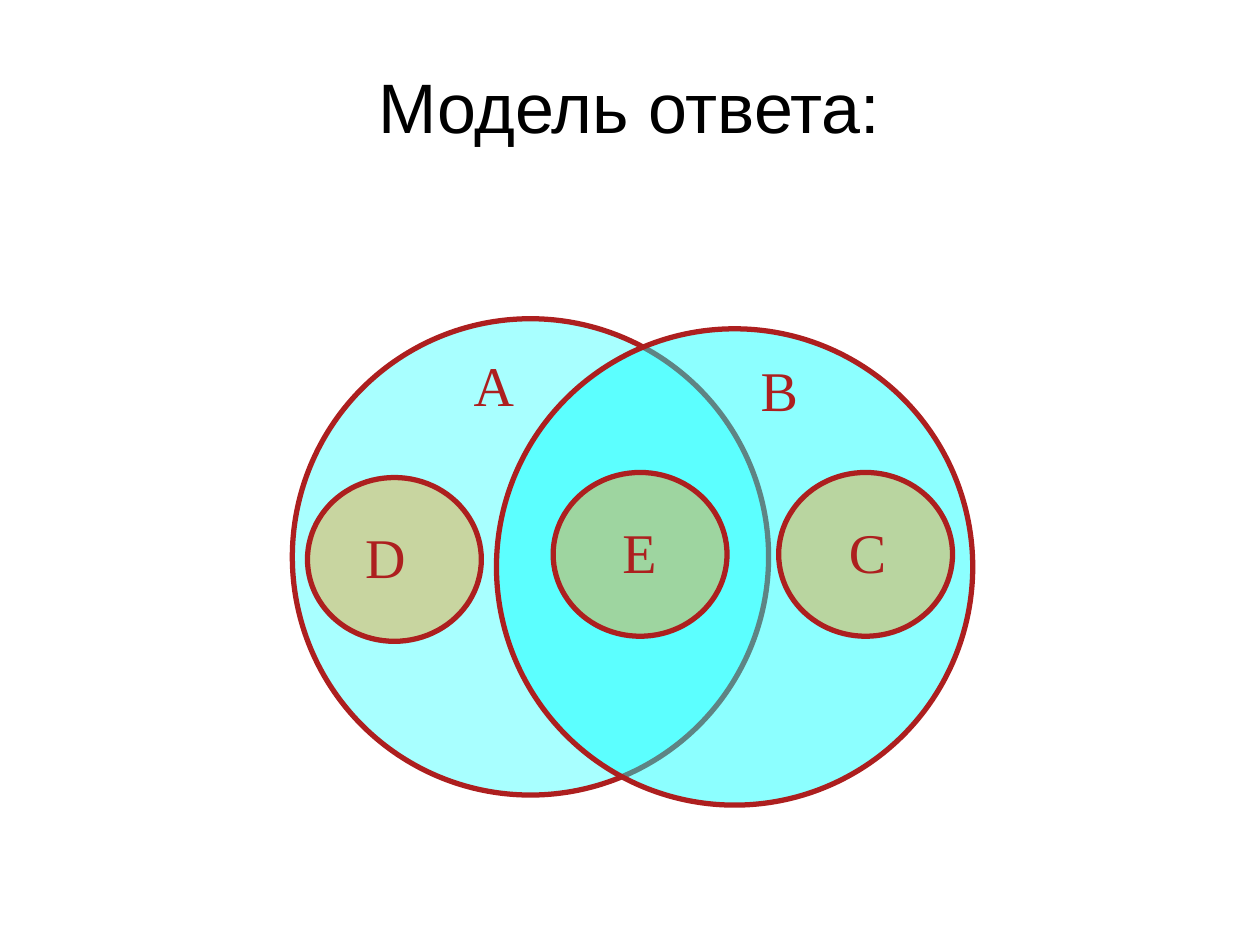
from dataclasses import dataclass

from lxml.etree import SubElement
from pptx import Presentation
from pptx.dml.color import RGBColor
from pptx.enum.shapes import MSO_SHAPE
from pptx.enum.text import MSO_ANCHOR, MSO_AUTO_SIZE, PP_ALIGN
from pptx.oxml.ns import qn
from pptx.util import Inches, Pt


@dataclass(frozen=True)
class Theme:
    black: RGBColor = RGBColor(0x00, 0x00, 0x00)
    red: RGBColor = RGBColor(0xAD, 0x1F, 0x1F)
    cyan: RGBColor = RGBColor(0x00, 0xFF, 0xFF)
    orange: RGBColor = RGBColor(0xF0, 0xA2, 0x2E)
    title_font: str = "Arial"
    label_font: str = "Times New Roman"
    title_size: Pt = Pt(40)
    label_size: Pt = Pt(32)
    outline: Pt = Pt(3)


THEME = Theme()
SET_SIZE = (3.78, 3.78)
SUBSET_SIZE = (1.38, 1.3)
LABEL_HEIGHT = 0.63


def style_text(tf, text, font, size, color, align):
    p = tf.paragraphs[0]
    p.text = text
    p.alignment = align
    p.font.name = font
    p.font.size = size
    p.font.color.rgb = color


def set_title(s, text):
    sp = s.shapes.title
    sp.left, sp.top = Inches(0.27), Inches(0.21)
    sp.width, sp.height = Inches(9.45), Inches(1.25)
    tf = sp.text_frame
    tf.vertical_anchor = MSO_ANCHOR.MIDDLE
    style_text(tf, text, THEME.title_font, THEME.title_size, THEME.black,
               PP_ALIGN.CENTER)


def add_ellipse(s, left, top, size, color, opacity):
    sp = s.shapes.add_shape(MSO_SHAPE.OVAL, Inches(left), Inches(top),
                            *map(Inches, size))
    sp.shadow.inherit = False
    sp.fill.solid()
    sp.fill.fore_color.rgb = color
    sp.line.color.rgb = THEME.red
    sp.line.width = THEME.outline
    # Opacity in percent
    clr = sp.fill._xPr.find(qn("a:solidFill")).find(qn("a:srgbClr"))
    SubElement(clr, qn("a:alpha")).set("val", str(opacity * 1000))


def add_label(s, text, left, top, width, align=PP_ALIGN.CENTER):
    sp = s.shapes.add_textbox(Inches(left), Inches(top), Inches(width),
                              Inches(LABEL_HEIGHT))
    tf = sp.text_frame
    tf.word_wrap = True
    tf.auto_size = MSO_AUTO_SIZE.SHAPE_TO_FIT_TEXT
    style_text(tf, text, THEME.label_font, THEME.label_size, THEME.red, align)


def main():
    prs = Presentation()
    prs.slide_width, prs.slide_height = Inches(10), Inches(7.5)
    s = prs.slides.add_slide(prs.slide_layouts[5])
    set_title(s, "Модель ответа:")

    # Two overlapping sets
    for left, top, opacity in [(2.32, 2.53, 34), (3.94, 2.61, 45)]:
        add_ellipse(s, left, top, SET_SIZE, THEME.cyan, opacity)
    add_label(s, "А", 3.66, 2.73, 0.55, PP_ALIGN.LEFT)
    add_label(s, "В", 5.83, 2.77, 0.71)

    # Subsets: left only, shared, right only
    for left, top in [(2.44, 3.79), (4.39, 3.75), (6.18, 3.75)]:
        add_ellipse(s, left, top, SUBSET_SIZE, THEME.orange, 45)
    add_label(s, "D", 2.8, 4.1, 0.59, PP_ALIGN.LEFT)
    add_label(s, "Е", 4.72, 4.06, 0.71)
    add_label(s, "С", 6.57, 4.06, 0.63)

    prs.save("out.pptx")


if __name__ == "__main__":
    main()
